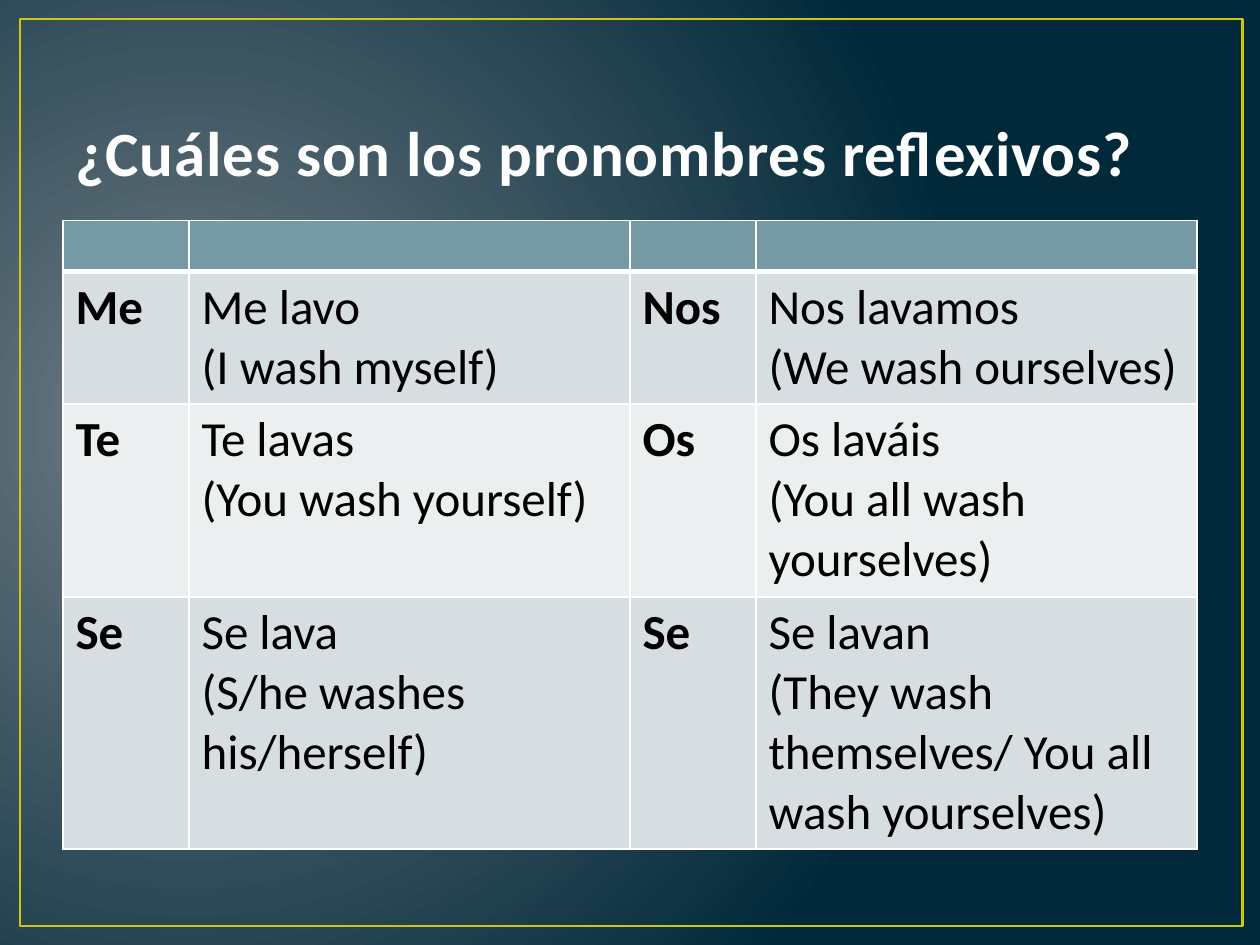
import pptx
import pptx.dml.color
import pptx.enum.shapes
import pptx.enum.text
import pptx.oxml.ns
import pptx.util
from dataclasses import dataclass
from lxml import etree

Inches = pptx.util.Inches
Pt = pptx.util.Pt
qn = pptx.oxml.ns.qn


@dataclass(frozen=True)
class Theme:
    font: str = "Calibri"
    title_size: int = 36
    body_size: int = 28
    glow: str = "717C84"
    night: str = "01293A"
    frame: str = "CFC60D"
    title: str = "FEFEFE"
    text: str = "000000"
    header: str = "759AA5"
    bands: tuple = ("D6DEE1", "ECEFF0")
    border: str = "FFFFFF"
    border_width: int = 1
    header_rule: int = 3


THEME = Theme()
COLUMN_WIDTHS = (1, 3.5, 1, 3.5)
ROW_HEIGHTS = (0.4, 1.05, 1.53, 2)
PRONOUNS = (
    (("Me",), ("Me lavo", "(I wash myself)"),
     ("Nos",), ("Nos lavamos", "(We wash ourselves)")),
    (("Te",), ("Te lavas", "(You wash yourself)"),
     ("Os",), ("Os laváis", "(You all wash yourselves)")),
    (("Se",), ("Se lava", "(S/he washes his/herself)"),
     ("Se",), ("Se lavan", "(They wash themselves/ You all wash yourselves)")),
)


def rgb(value):
    return pptx.dml.color.RGBColor.from_string(value)


def add_run(paragraph, text, size, color, bold):
    run = paragraph.add_run()
    run.text = text
    run.font.name = THEME.font
    run.font.size = Pt(size)
    run.font.bold = bold
    run.font.color.rgb = rgb(color)
    return run


def set_background(slide):
    fill = slide.background.fill
    fill.gradient()
    for stop, position, color in zip(fill.gradient_stops, (0, 1), (THEME.glow, THEME.night)):
        stop.position = position
        stop.color.rgb = rgb(color)
    gradient = slide.element.find(".//" + qn("a:gradFill"))
    gradient.remove(gradient.find(qn("a:lin")))
    circle = etree.SubElement(gradient, qn("a:path"), path="circle")
    etree.SubElement(circle, qn("a:fillToRect"), l="15000", t="50000", r="85000", b="60000")


def add_frame(slide):
    frame = slide.shapes.add_shape(
        pptx.enum.shapes.MSO_SHAPE.RECTANGLE,
        Inches(0.16), Inches(0.15), Inches(9.7), Inches(7.2))
    frame.shadow.inherit = False
    frame.fill.background()
    frame.line.color.rgb = rgb(THEME.frame)
    frame.line.width = Pt(1.5)


def set_title(slide, text):
    title = slide.shapes.title
    title.left, title.top = Inches(0.5), Inches(0.3)
    title.width, title.height = Inches(9), Inches(1.25)
    text_frame = title.text_frame
    text_frame.word_wrap = True
    text_frame.auto_size = pptx.enum.text.MSO_AUTO_SIZE.NONE
    text_frame.vertical_anchor = pptx.enum.text.MSO_ANCHOR.BOTTOM
    paragraph = text_frame.paragraphs[0]
    paragraph.alignment = pptx.enum.text.PP_ALIGN.LEFT
    run = add_run(paragraph, text, THEME.title_size, THEME.title, True)
    run.font._element.set("spc", "50")


def set_borders(cell, top, bottom):
    properties = cell._tc.get_or_add_tcPr()
    widths = {"L": THEME.border_width, "R": THEME.border_width, "T": top, "B": bottom}
    for side, width in widths.items():
        line = etree.SubElement(properties, qn("a:ln" + side), w=str(Pt(width)))
        fill = etree.SubElement(line, qn("a:solidFill"))
        etree.SubElement(fill, qn("a:srgbClr"), val=THEME.border)


def format_cell(cell, row_index):
    top = THEME.header_rule if row_index == 1 else THEME.border_width
    bottom = THEME.header_rule if row_index == 0 else THEME.border_width
    set_borders(cell, top, bottom)
    color = THEME.bands[(row_index - 1) % 2] if row_index else THEME.header
    cell.fill.solid()
    cell.fill.fore_color.rgb = rgb(color)


def write_cell(cell, lines, bold):
    text_frame = cell.text_frame
    for index, line in enumerate(lines):
        paragraph = text_frame.add_paragraph() if index else text_frame.paragraphs[0]
        add_run(paragraph, line, THEME.body_size, THEME.text, bold)


def add_pronoun_table(slide):
    table = slide.shapes.add_table(
        len(ROW_HEIGHTS), len(COLUMN_WIDTHS), Inches(0.5), Inches(1.75),
        Inches(sum(COLUMN_WIDTHS)), Inches(sum(ROW_HEIGHTS))).table
    for column, width in zip(table.columns, COLUMN_WIDTHS):
        column.width = Inches(width)
    for row_index, (row, height) in enumerate(zip(table.rows, ROW_HEIGHTS)):
        row.height = Inches(height)
        for cell in row.cells:
            format_cell(cell, row_index)
    for row_index, entries in enumerate(PRONOUNS, start=1):
        for column_index, lines in enumerate(entries):
            write_cell(table.cell(row_index, column_index), lines, column_index % 2 == 0)


def main():
    presentation = pptx.Presentation()
    presentation.slide_width = Inches(10)
    presentation.slide_height = Inches(7.5)
    slide = presentation.slides.add_slide(presentation.slide_layouts.get_by_name("Title Only"))
    set_background(slide)
    add_frame(slide)
    set_title(slide, "¿Cuáles son los pronombres reflexivos?")
    add_pronoun_table(slide)
    presentation.save("out.pptx")


if __name__ == "__main__":
    main()
